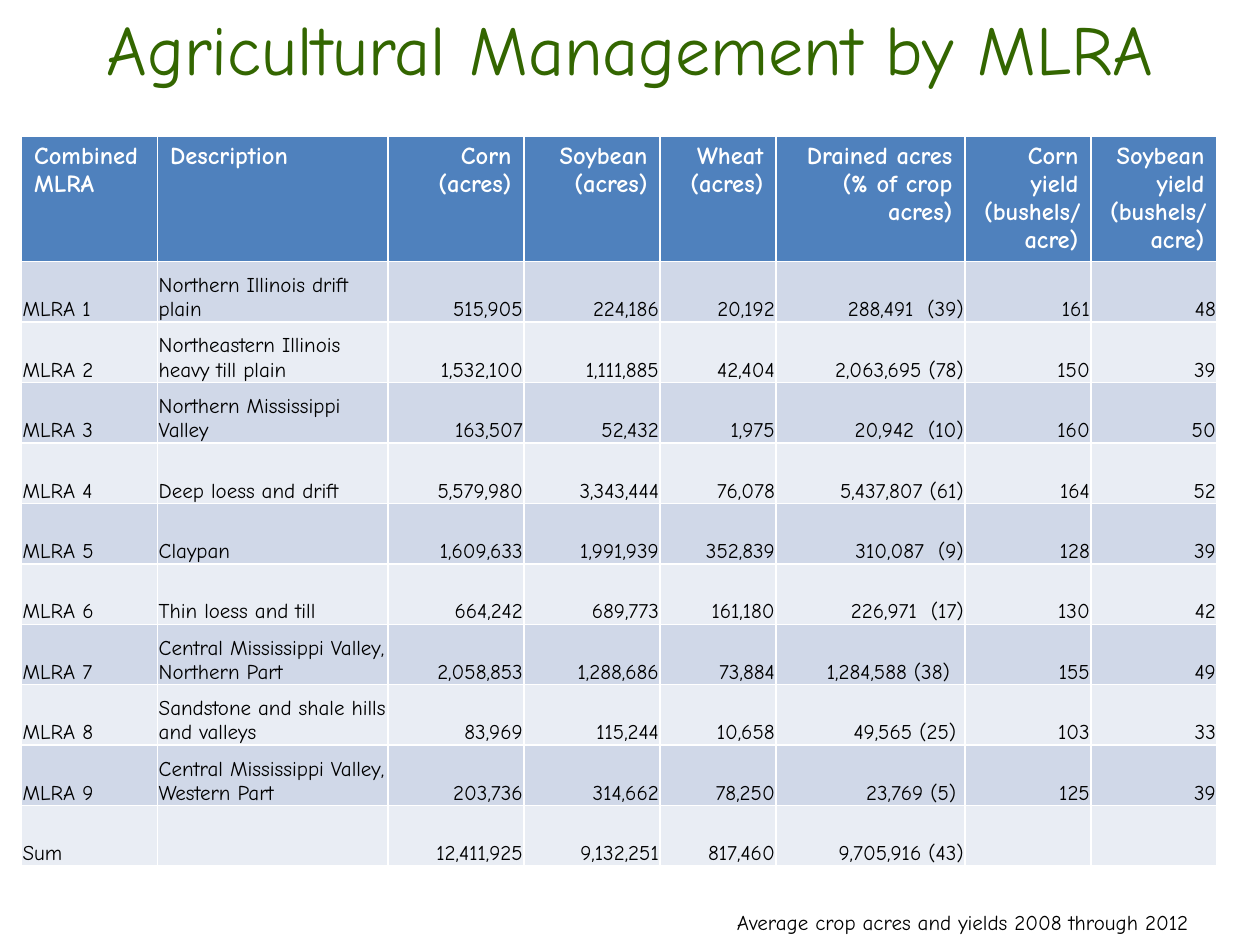
from pptx import Presentation
from pptx import util as u
from pptx.dml.color import RGBColor
from pptx.enum import text as t

PX = 9144  # EMU in one px, 100 px to the inch
FONT = "Comic Neue"
GREEN = RGBColor(0x33, 0x66, 0x00)
WHITE = RGBColor(0xFF, 0xFF, 0xFF)
BLACK = RGBColor(0, 0, 0)
BLUE = RGBColor(0x4F, 0x81, 0xBD)
BANDS = RGBColor(0xD0, 0xD8, 0xE8), RGBColor(0xE9, 0xED, 0xF4)

TITLE = "Agricultural Management by MLRA"
NOTE = "Average crop acres and yields 2008 through 2012"
HEADS = ["Combined MLRA", "Description", "Corn (acres)", "Soybean\n(acres)",
         "Wheat\n(acres)", "Drained acres (% of crop acres)",
         "Corn yield (bushels/acre)", "Soybean yield (bushels/acre)"]
ROWS = [
    ("MLRA 1", "Northern Illinois drift plain",
     "515,905", "224,186", "20,192", "288,491  (39)", "161", "48"),
    ("MLRA 2", "Northeastern Illinois heavy till plain",
     "1,532,100", "1,111,885", "42,404", "2,063,695 (78)", "150", "39"),
    ("MLRA 3", "Northern Mississippi Valley",
     "163,507", "52,432", "1,975", "20,942  (10)", "160", "50"),
    ("MLRA 4", "Deep loess and drift",
     "5,579,980", "3,343,444", "76,078", "5,437,807 (61)", "164", "52"),
    ("MLRA 5", "Claypan",
     "1,609,633", "1,991,939", "352,839", "310,087  (9)", "128", "39"),
    ("MLRA 6", "Thin loess and till",
     "664,242", "689,773", "161,180", "226,971  (17)", "130", "42"),
    ("MLRA 7", "Central Mississippi Valley, Northern Part",
     "2,058,853", "1,288,686", "73,884", "1,284,588 (38)", "155", "49"),
    ("MLRA 8", "Sandstone and shale hills and valleys",
     "83,969", "115,244", "10,658", "49,565 (25)", "103", "33"),
    ("MLRA 9", "Central Mississippi Valley, Western Part",
     "203,736", "314,662", "78,250", "23,769 (5)", "125", "39"),
    ("Sum", "", "12,411,925", "9,132,251", "817,460", "9,705,916 (43)", "", ""),
]
WIDTHS = [108, 183, 108, 108, 92, 150, 100, 100]
HEAD_H, ROW_H = 83, 48
DRAINED = 5
INSETS = {"MLRA 7": 12, "MLRA 8": 7, "MLRA 9": 7}  # right inset of drained acres


def px(*vals):
    return [v * PX for v in vals]


def style(frame, size, color, bold=False, align=t.PP_ALIGN.LEFT):
    for par in frame.paragraphs:
        par.alignment = align
        for run in par.runs:
            font = run.font
            font.name, font.size, font.bold = FONT, u.Pt(size), bold
            font.color.rgb = color


def fill(cell, words, col, back, size, color, bold=False):
    cell.fill.solid()
    cell.fill.fore_color.rgb = back
    cell.text_frame.text = words
    align = t.PP_ALIGN.LEFT if col < 2 else t.PP_ALIGN.RIGHT
    style(cell.text_frame, size, color, bold, align)


def add_grid(slide):
    high = HEAD_H + ROW_H * len(ROWS)
    grid = slide.shapes.add_table(len(ROWS) + 1, len(HEADS),
                                  *px(17, 108, sum(WIDTHS), high)).table
    for col, wide in zip(grid.columns, WIDTHS):
        col.width = wide * PX
    for i, row in enumerate(grid.rows):
        row.height = (ROW_H if i else HEAD_H) * PX
    for c, head in enumerate(HEADS):
        fill(grid.cell(0, c), head, c, BLUE, 14, WHITE, True)
    for r, row in enumerate(ROWS):
        for c, words in enumerate(row):
            cell = grid.cell(r + 1, c)
            fill(cell, words, c, BANDS[r % 2], 12, BLACK)
            cell.vertical_anchor = t.MSO_ANCHOR.BOTTOM
            cell.margin_left = cell.margin_top = cell.margin_right = PX
            cell.margin_bottom = 0
            if c == DRAINED:
                cell.margin_right = INSETS.get(row[0], 1) * PX


def main():
    prs = Presentation()
    prs.slide_width, prs.slide_height = px(1000, 750)
    slide = prs.slides.add_slide(prs.slide_layouts[5])

    title = slide.shapes.title
    title.left, title.top, title.width, title.height = px(0, 0, 1000, 75)
    title.text_frame.text = TITLE
    title.text_frame.vertical_anchor = t.MSO_ANCHOR.MIDDLE
    style(title.text_frame, 40, GREEN, align=t.PP_ALIGN.CENTER)

    add_grid(slide)

    note = slide.shapes.add_textbox(*px(575, 717, 412, 30)).text_frame
    note.text = NOTE
    note.word_wrap = False
    note.auto_size = t.MSO_AUTO_SIZE.SHAPE_TO_FIT_TEXT
    style(note, 12, BLACK)

    prs.save("out.pptx")


if __name__ == "__main__":
    main()
